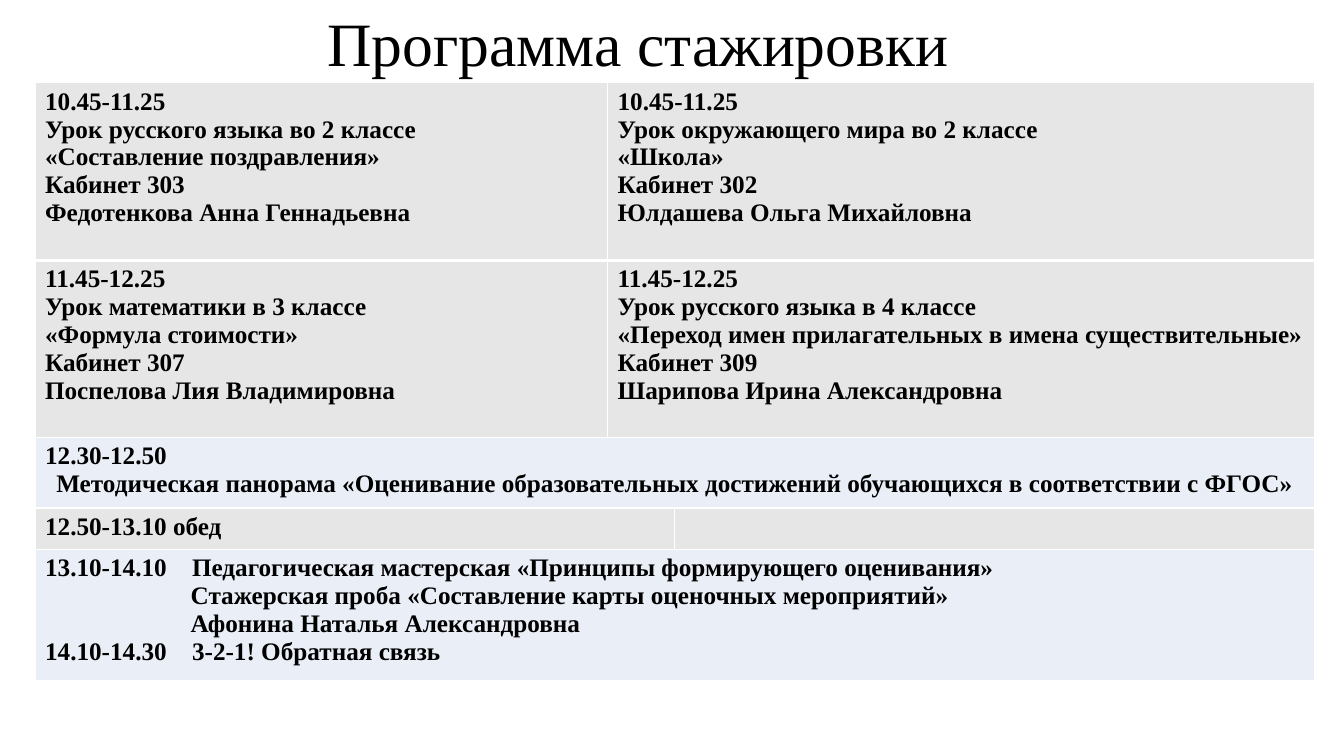
from lxml import etree
from pptx import Presentation
from pptx import util as u
from pptx.dml.color import RGBColor
from pptx.enum import text
from pptx.oxml import ns

BLACK = RGBColor(0x00, 0x00, 0x00)
WHITE = RGBColor(0xFF, 0xFF, 0xFF)
GREY = RGBColor(0xE7, 0xE6, 0xE6)
PALE_BLUE = RGBColor(0xEA, 0xEF, 0xF7)

TITLE_FONT = {"name": "Times New Roman", "size": u.Pt(44)}
ENTRY_FONT = {"name": "Times New Roman", "size": u.Pt(18), "bold": True}
COLUMN_WIDTHS = [409, 48, 457]
ROW_HEIGHTS = [127, 126.5, 47, 29.5, 87]
TOPIC_START = 105

PROGRAMME = [
    (GREY, [
        (0, 0, ["10.45-11.25", "Урок русского языка во 2 классе",
                "«Составление поздравления»", "Кабинет 303",
                "Федотенкова Анна Геннадьевна"]),
        (1, 2, ["10.45-11.25", "Урок окружающего мира во 2 классе",
                "«Школа»", "Кабинет 302", "Юлдашева Ольга Михайловна"])]),
    (GREY, [
        (0, 0, ["11.45-12.25", "Урок математики в 3 классе",
                "«Формула стоимости»", "Кабинет 307",
                "Поспелова Лия Владимировна"]),
        (1, 2, ["11.45-12.25", "Урок русского языка в 4 классе",
                "«Переход имен прилагательных в имена существительные»",
                "Кабинет 309", "Шарипова Ирина Александровна"])]),
    (PALE_BLUE, [
        (0, 2, ["12.30-12.50",
                "Методическая панорама «Оценивание образовательных достижений "
                "обучающихся в соответствии с ФГОС»"])]),
    (GREY, [(0, 1, ["12.50-13.10 обед"]), (2, 2, [])]),
    (PALE_BLUE, [
        (0, 2, ["13.10-14.10\tПедагогическая мастерская «Принципы формирующего оценивания»",
                "Стажерская проба «Составление карты оценочных мероприятий»",
                "Афонина Наталья Александровна",
                "14.10-14.30\t3-2-1! Обратная связь"])]),
]
METHOD_ROW, WORKSHOP_ROW = 2, 4


def set_font(paragraph, values):
    for run in paragraph.runs:
        for attribute, value in values.items():
            setattr(run.font, attribute, value)
        run.font.color.rgb = BLACK


def add_border(cell, side, width):
    line = etree.SubElement(cell._tc.get_or_add_tcPr(), ns.qn("a:ln" + side), w=str(u.Pt(width)))
    fill = etree.SubElement(line, ns.qn("a:solidFill"))
    etree.SubElement(fill, ns.qn("a:srgbClr"), val=str(WHITE))


deck = Presentation()
deck.slide_width, deck.slide_height = u.Pt(960), u.Pt(540)
slide = deck.slides.add_slide(deck.slide_layouts[6])

heading = slide.shapes.add_textbox(u.Pt(42), u.Pt(0), u.Pt(828), u.Pt(66)).text_frame
heading.word_wrap = True
heading.vertical_anchor = text.MSO_ANCHOR.MIDDLE
heading.text = "Программа стажировки"
heading.paragraphs[0].alignment = text.PP_ALIGN.CENTER
heading.paragraphs[0].line_spacing = 0.9
set_font(heading.paragraphs[0], TITLE_FONT)

schedule = slide.shapes.add_table(
    len(ROW_HEIGHTS), len(COLUMN_WIDTHS), u.Pt(25), u.Pt(59),
    u.Pt(sum(COLUMN_WIDTHS)), u.Pt(sum(ROW_HEIGHTS))).table
for column, width in zip(schedule.columns, COLUMN_WIDTHS):
    column.width = u.Pt(width)
for row, height in zip(schedule.rows, ROW_HEIGHTS):
    row.height = u.Pt(height)

for row_index, (colour, entries) in enumerate(PROGRAMME):
    for cell in schedule.rows[row_index].cells:
        for side in "LRTB":
            thick = (row_index, side) in [(0, "B"), (1, "T")]
            add_border(cell, side, 3 if thick else 1)
        cell.fill.solid()
        cell.fill.fore_color.rgb = colour
    for first, last, lines in entries:
        cell = schedule.cell(row_index, first)
        if last > first:
            cell.merge(schedule.cell(row_index, last))
        cell.text = "\n".join(lines)
        for line_index, paragraph in enumerate(cell.text_frame.paragraphs):
            if row_index == METHOD_ROW and line_index == 1:
                paragraph.alignment = text.PP_ALIGN.CENTER
            if row_index == WORKSHOP_ROW:
                properties = paragraph._p.get_or_add_pPr()
                if "\t" in paragraph.text:
                    stops = etree.SubElement(properties, ns.qn("a:tabLst"))
                    etree.SubElement(stops, ns.qn("a:tab"), pos=str(u.Pt(TOPIC_START)), algn="l")
                else:
                    properties.set("marL", str(u.Pt(TOPIC_START - 1)))
            set_font(paragraph, ENTRY_FONT)

deck.save("out.pptx")
